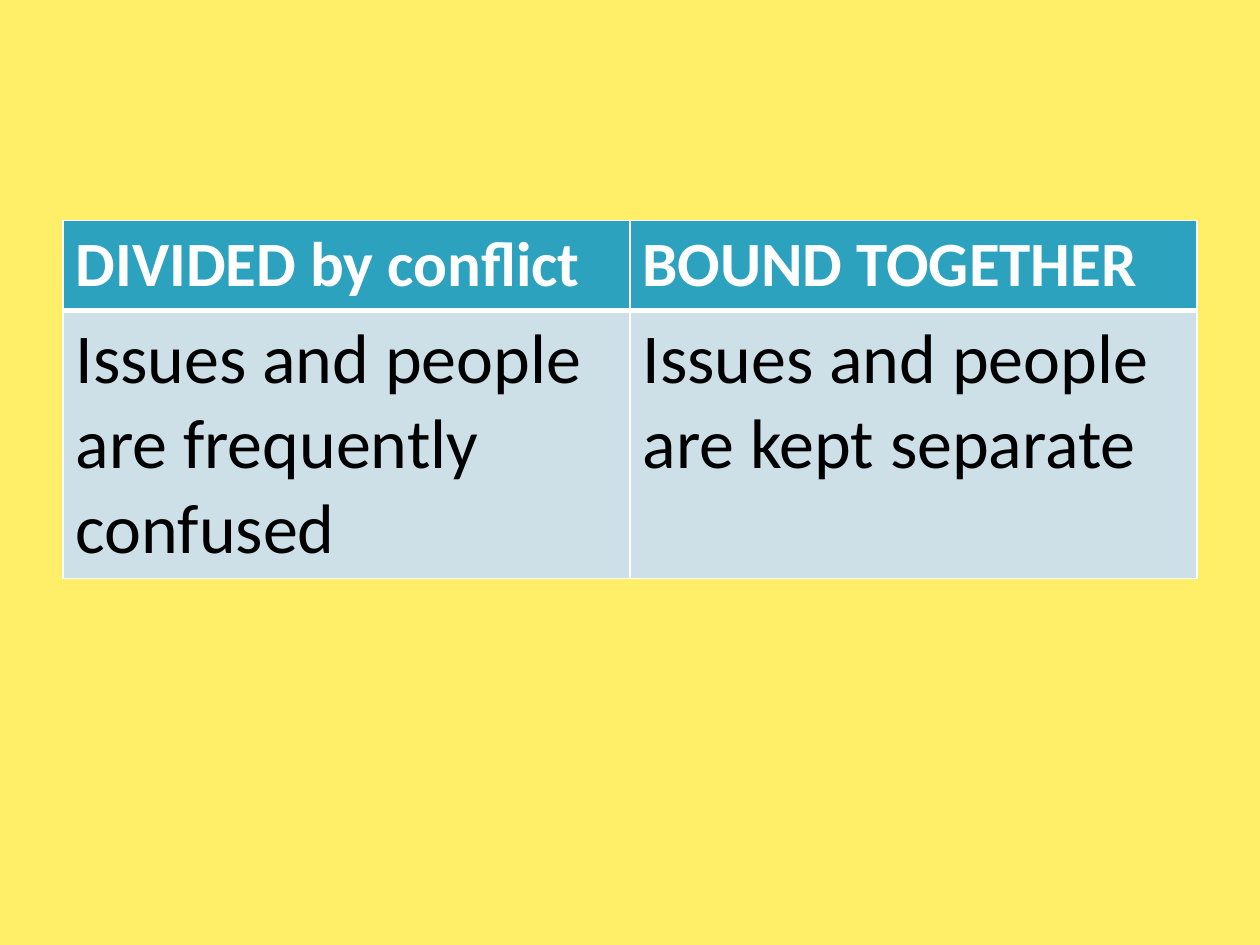
from lxml import etree
from pptx import Presentation
from pptx.dml.color import RGBColor
from pptx.oxml.ns import qn
from pptx.util import Inches, Pt

BLANK_LAYOUT = 6
WHITE = "FFFFFF"


def color(hex_string):
    return RGBColor.from_string(hex_string)


def write_cell(cell, text, *, size, ink, fill, bold, borders):
    """Fill one table cell; borders maps each line tag to its width in points."""
    paragraph = cell.text_frame.paragraphs[0]
    run = paragraph.add_run()
    run.text = text
    run.font.name = "Calibri"
    run.font.size = Pt(size)
    run.font.bold = bold
    run.font.color.rgb = color(ink)

    properties = cell._tc.get_or_add_tcPr()
    for tag, width in borders.items():
        line = etree.SubElement(properties, qn(tag), w=str(Pt(width)))
        solid = etree.SubElement(line, qn("a:solidFill"))
        etree.SubElement(solid, qn("a:srgbClr"), val=WHITE)
    cell.fill.solid()
    cell.fill.fore_color.rgb = color(fill)


# Slide and background
prs = Presentation()
prs.slide_width, prs.slide_height = Inches(10), Inches(7.5)
slide = prs.slides.add_slide(prs.slide_layouts[BLANK_LAYOUT])
slide.background.fill.solid()
slide.background.fill.fore_color.rgb = color("FFEE67")

# Comparison table: a header row above a body row
header_format = dict(size=36, ink=WHITE, fill="2DA2BF", bold=True,
                     borders={"a:lnL": 1, "a:lnR": 1, "a:lnT": 1, "a:lnB": 3})
body_format = dict(size=40, ink="000000", fill="CDE0E8", bold=False,
                   borders={"a:lnL": 1, "a:lnR": 1, "a:lnT": 3, "a:lnB": 1})
rows = [
    (0.7, header_format, ["DIVIDED by conflict", "BOUND TOGETHER"]),
    (2.1, body_format, ["Issues and people are frequently confused",
                        "Issues and people are kept separate"]),
]
comparison = slide.shapes.add_table(
    len(rows), 2, Inches(0.5), Inches(1.75), Inches(9), Inches(2.8)).table
for row_index, (height, cell_format, texts) in enumerate(rows):
    comparison.rows[row_index].height = Inches(height)
    for column_index, text in enumerate(texts):
        write_cell(comparison.cell(row_index, column_index), text, **cell_format)

prs.save("out.pptx")
